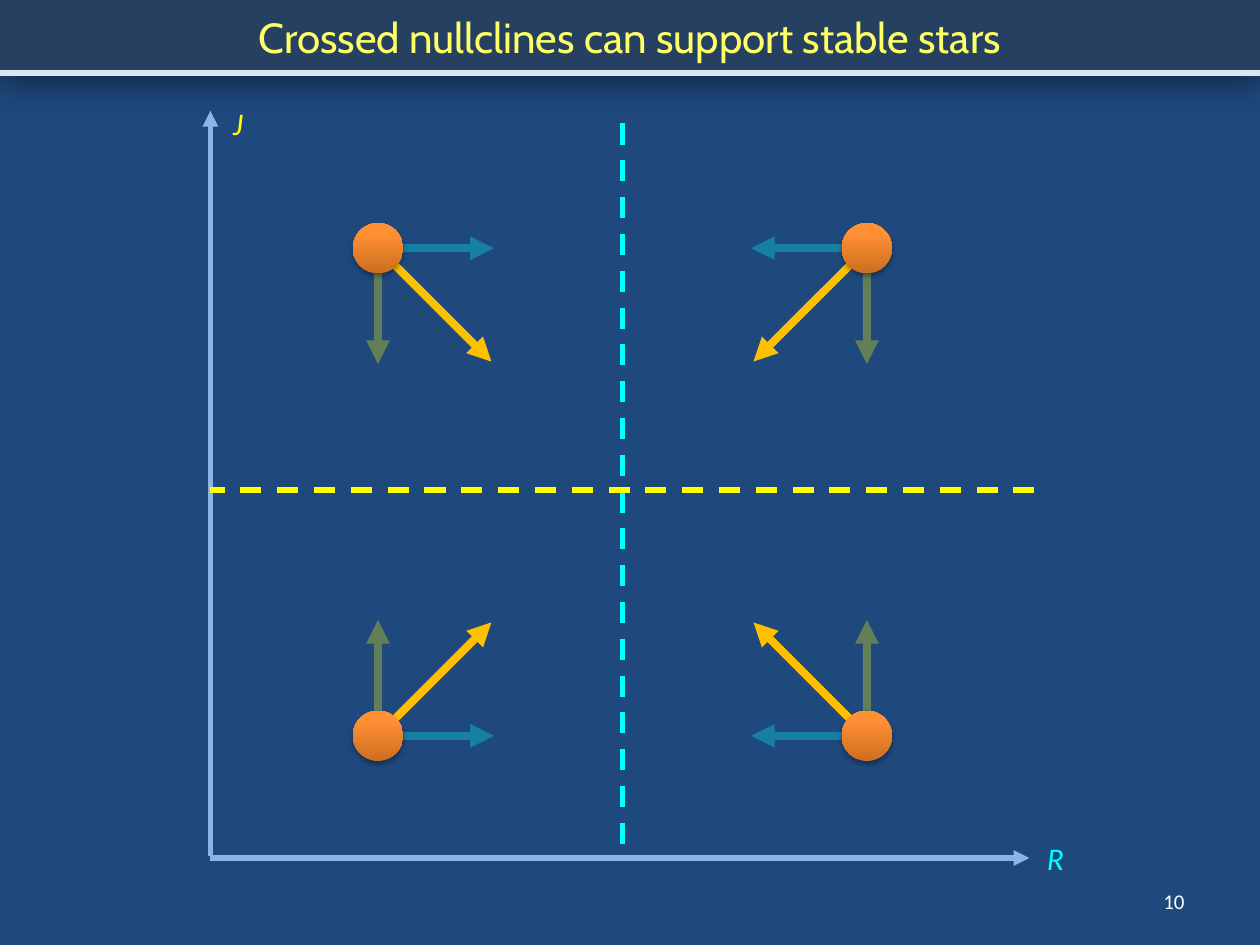
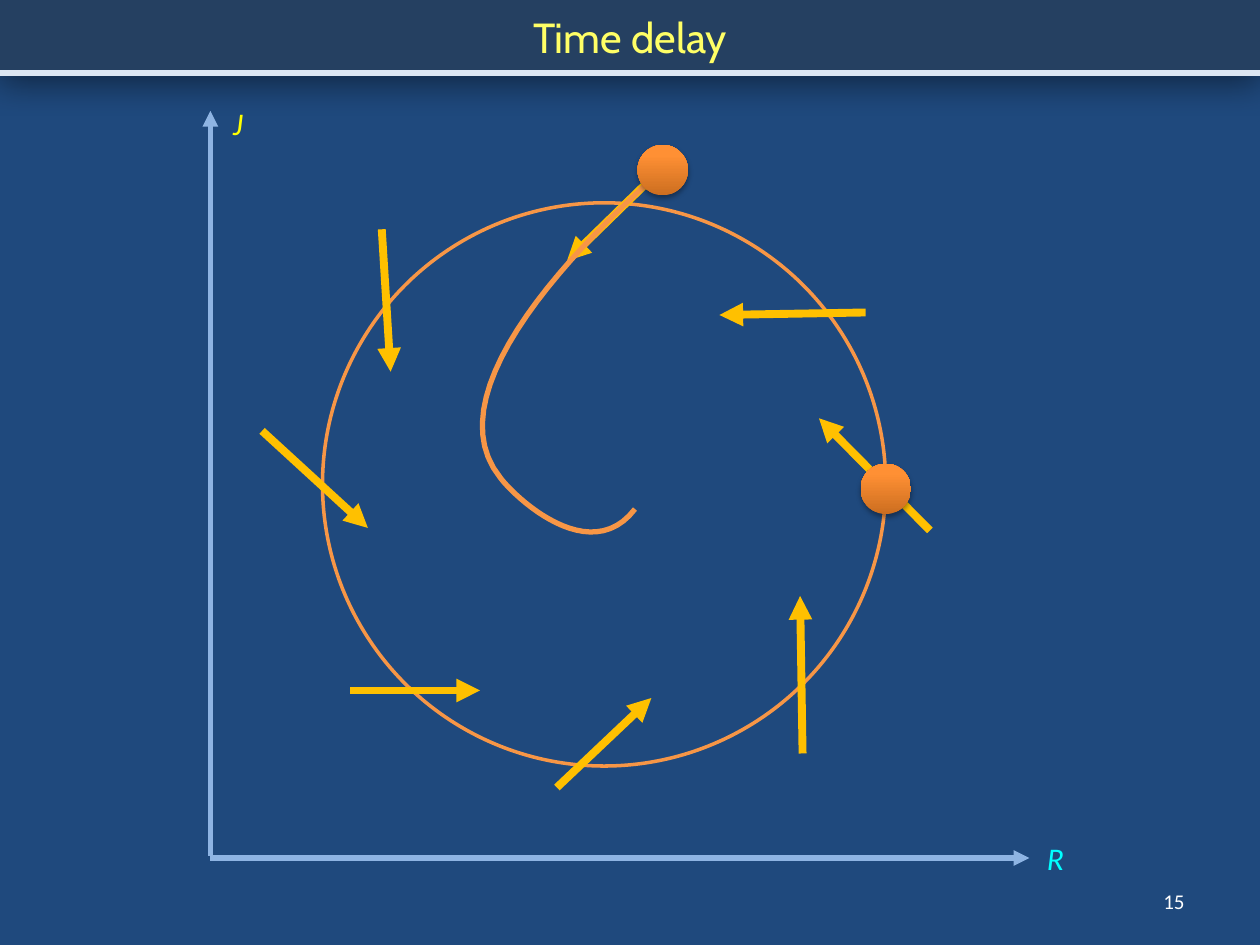
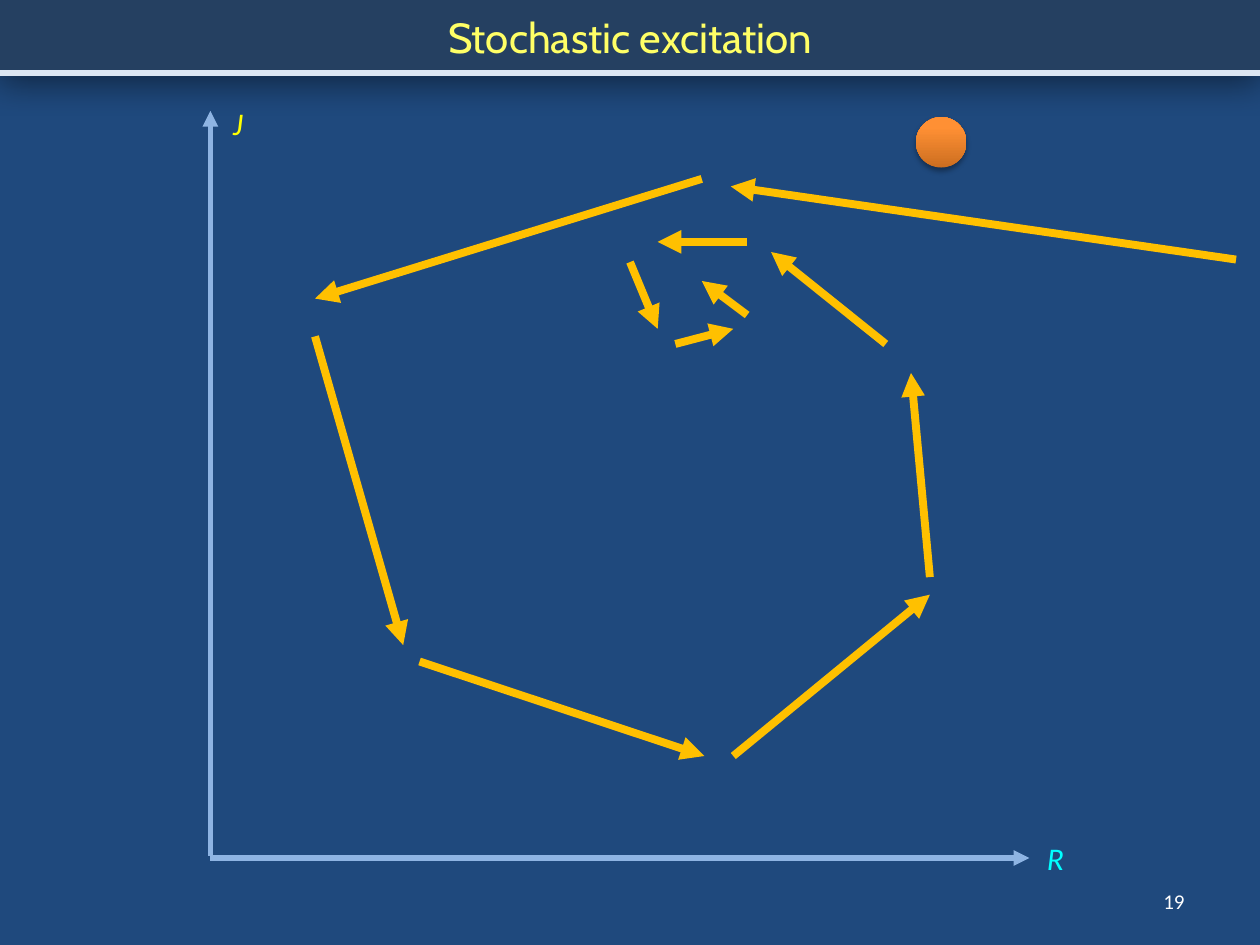
import lxml.etree
import pptx
import pptx.dml.color
import pptx.enum.dml
import pptx.enum.shapes
import pptx.enum.text
import pptx.oxml.ns
import pptx.util

COLUMNS, ROWS = 10, 7.5
SHAPES = pptx.enum.shapes.MSO_SHAPE
ALIGN = pptx.enum.text.PP_ALIGN
MIDDLE = pptx.enum.text.MSO_ANCHOR.MIDDLE

NAVY, BAND, PALE = "1F497D", "254061", "DCE6F2"
AXIS, FLOW, ORBIT = "8EB4E3", "FFC000", "F79646"
CYAN, YELLOW, TITLE, WHITE = "00FFFF", "FFFF00", "FFFF66", "FFFFFF"
STAR_DARK, STAR_LIGHT, BLACK = "CC6E20", "FF9034", "000000"


def rgb(code):
    return pptx.dml.color.RGBColor.from_string(code)


def add_child(parent, tag, **attributes):
    return lxml.etree.SubElement(parent, pptx.oxml.ns.qn(tag),
                                 {name: str(value) for name, value in attributes.items()})


def set_alpha(color_element, percent):
    add_child(color_element, "a:alpha", val=percent * 1000)


def bezier(start, control_1, control_2, end, steps=24):
    """Points along a cubic curve, without its start."""
    points = []
    for step in range(1, steps + 1):
        t = step / steps
        weights = ((1 - t) ** 3, 3 * t * (1 - t) ** 2, 3 * t * t * (1 - t), t ** 3)
        corners = (start, control_1, control_2, end)
        points.append(tuple(sum(weight * corner[axis] for weight, corner in zip(weights, corners))
                            for axis in (0, 1)))
    return points


class PhasePlane:
    """Holds the deck's style and the slide being drawn; lengths are grid units."""

    def __init__(self):
        self.deck = pptx.Presentation()
        self.deck.slide_width = pptx.util.Inches(10)
        self.deck.slide_height = pptx.util.Inches(7.5)
        background = self.deck.slide_master.background.fill
        background.solid()
        background.fore_color.rgb = rgb(NAVY)
        self.page = None

    def grid(self, *lengths):
        """Turn alternating columns and rows into slide lengths."""
        units = (self.deck.slide_width / COLUMNS, self.deck.slide_height / ROWS)
        return [pptx.util.Emu(round(length * units[index % 2]))
                for index, length in enumerate(lengths)]

    def start(self, title, number):
        self.page = self.deck.slides.add_slide(self.deck.slide_layouts[5])
        band = self.page.shapes.title
        band.left, band.top, band.width, band.height = self.grid(0, 0, COLUMNS, 0.58)
        band.fill.solid()
        band.fill.fore_color.rgb = rgb(BAND)
        self.shadow(band, 50, 20, 5)
        self.put_text(band, title, "Cabin", 24, TITLE, ALIGN.CENTER, MIDDLE)
        self.outline(SHAPES.RECTANGLE, -0.17, 0.58, 10.33, 7.17, PALE, 3)
        self.line((1.67, 6.81), (8.17, 6.81), AXIS, 3)
        self.line((1.67, 6.79), (1.67, 0.88), AXIS, 3)
        self.axis_name("J", 1.75, 0.78, 0.28, YELLOW)
        self.axis_name("R", 8.21, 6.61, 0.34, CYAN)
        box = self.page.shapes.add_textbox(*self.grid(7.17, 6.95, 2.33, 0.4))
        self.put_text(box, str(number), "Calibri", 12, WHITE, ALIGN.RIGHT, MIDDLE)

    def put_text(self, box, text, font, size, color, align=None, anchor=None, wrap=True):
        frame = box.text_frame
        frame.text = text
        frame.word_wrap = wrap
        frame.vertical_anchor = anchor
        para = frame.paragraphs[0]
        para.alignment = align
        para.font.name = font
        para.font.size = pptx.util.Pt(size)
        para.font.color.rgb = rgb(color)
        return para

    def axis_name(self, text, left, top, width, color):
        box = self.page.shapes.add_textbox(*self.grid(left, top, width, 0.4))
        self.put_text(box, text, "Calibri", 18, color, wrap=False).font.italic = True
        box.text_frame.auto_size = pptx.enum.text.MSO_AUTO_SIZE.SHAPE_TO_FIT_TEXT

    def shadow(self, shape, percent, blur, distance):
        """Drop a black shadow straight down; blur and distance in points."""
        shape.shadow.inherit = False
        effects = shape.element.spPr.find(pptx.oxml.ns.qn("a:effectLst"))
        outer = add_child(effects, "a:outerShdw", blurRad=pptx.util.Pt(blur),
                          dist=pptx.util.Pt(distance), dir=5400000, rotWithShape=0)
        set_alpha(add_child(outer, "a:srgbClr", val=BLACK), percent)

    def stroke(self, shape, color, width):
        shape.line.color.rgb = rgb(color)
        shape.line.width = pptx.util.Pt(width)

    def outline(self, kind, left, top, width, height, color, weight):
        shape = self.page.shapes.add_shape(kind, *self.grid(left, top, width, height))
        shape.shadow.inherit = False
        shape.fill.background()
        self.stroke(shape, color, weight)

    def line(self, start, end, color=FLOW, width=4.5, alpha=None, dashed=False):
        """Draw an arrow, or a dashed line without a head."""
        connector = self.page.shapes.add_connector(
            pptx.enum.shapes.MSO_CONNECTOR.STRAIGHT, *self.grid(*start, *end))
        self.stroke(connector, color, width)
        properties = connector.element.spPr
        if alpha:
            set_alpha(next(properties.iter(pptx.oxml.ns.qn("a:srgbClr"))), alpha)
        if dashed:
            connector.line.dash_style = pptx.enum.dml.MSO_LINE.DASH
        else:
            add_child(properties.find(pptx.oxml.ns.qn("a:ln")), "a:tailEnd", type="triangle")
        add_child(properties, "a:effectLst")

    def star(self, x, y, size=0.4):
        shape = self.page.shapes.add_shape(
            SHAPES.OVAL, *self.grid(x - size / 2, y - size / 2, size, size))
        shape.line.fill.background()
        shape.fill.gradient()
        shape.fill.gradient_angle = 90
        stops = zip(shape.fill.gradient_stops, (0, 0.8), (STAR_DARK, STAR_LIGHT))
        for stop, position, color in stops:
            stop.position = position
            stop.color.rgb = rgb(color)
        self.shadow(shape, 35, 3.1, 1.8)

    def curve(self, start, *segments):
        points = [start]
        for segment in segments:
            points += bezier(points[-1], *segment)
        corners = [self.grid(*point) for point in points]
        builder = self.page.shapes.build_freeform(*corners[0])
        builder.add_line_segments(corners[1:], close=False)
        shape = builder.convert_to_shape()
        shape.shadow.inherit = False
        shape.fill.background()
        self.stroke(shape, ORBIT, 3)


def draw_nullclines(plane):
    plane.start("Crossed nullclines can support stable stars", 10)
    plane.line((4.94, 0.98), (4.94, 6.79), CYAN, 3, dashed=True)
    plane.line((8.21, 3.89), (1.67, 3.89), YELLOW, 3, dashed=True)
    reach, overlap = 0.92, 0.02
    for x, across in ((3, 1), (6.88, -1)):
        for y, down in ((1.97, 1), (5.84, -1)):
            plane.line((x, y), (x, y + reach * down), YELLOW, alpha=30)
            plane.line((x, y), (x + reach * across, y), CYAN, alpha=30)
            tail_x, tail_y = x - overlap * across, y - overlap * down
            plane.line((tail_x, tail_y), (tail_x + reach * across, tail_y + reach * down))
            plane.star(x, y)


def draw_time_delay(plane):
    plane.start("Time delay", 15)
    plane.outline(SHAPES.OVAL, 2.56, 1.61, 4.47, 4.47, ORBIT, 2)
    flows = (
        ((5.33, 1.26), (4.5, 2.07)), ((7.38, 4.21), (6.5, 3.32)),
        ((2.08, 3.42), (2.92, 4.19)), ((4.42, 6.25), (5.17, 5.54)),
        ((6.87, 2.48), (5.71, 2.5)), ((6.37, 5.98), (6.35, 4.73)),
        ((3.03, 1.82), (3.1, 2.95)), ((2.78, 5.48), (3.81, 5.48)),
    )
    for start, end in flows:
        plane.line(start, end)
    plane.curve((5.04, 4.04), ((4.68, 4.51), (4.08, 3.94), (3.97, 3.79)),
                ((3.47, 3.17), (4.39, 2.11), (5.29, 1.32)))
    plane.star(7.03, 3.88)
    plane.star(5.26, 1.35)


def draw_excitation(plane):
    plane.start("Stochastic excitation", 19)
    kicks = (
        ((5.93, 2.5), (5.57, 2.23)), ((5.93, 1.92), (5.22, 1.92)),
        ((5, 2.08), (5.22, 2.61)), ((5.36, 2.73), (5.82, 2.61)),
        ((7.03, 2.73), (6.12, 2)), ((7.38, 4.58), (7.23, 2.96)),
        ((5.82, 6), (7.38, 4.72)), ((3.33, 5.25), (5.59, 6)),
        ((2.5, 2.67), (3.2, 5.12)), ((5.57, 1.42), (2.5, 2.37)),
        ((9.81, 2.06), (5.8, 1.48)),
    )
    for start, end in kicks:
        plane.line(start, end)
    plane.star(7.47, 1.13)


def main():
    plane = PhasePlane()
    draw_nullclines(plane)
    draw_time_delay(plane)
    draw_excitation(plane)
    plane.deck.save("out.pptx")


if __name__ == "__main__":
    main()
